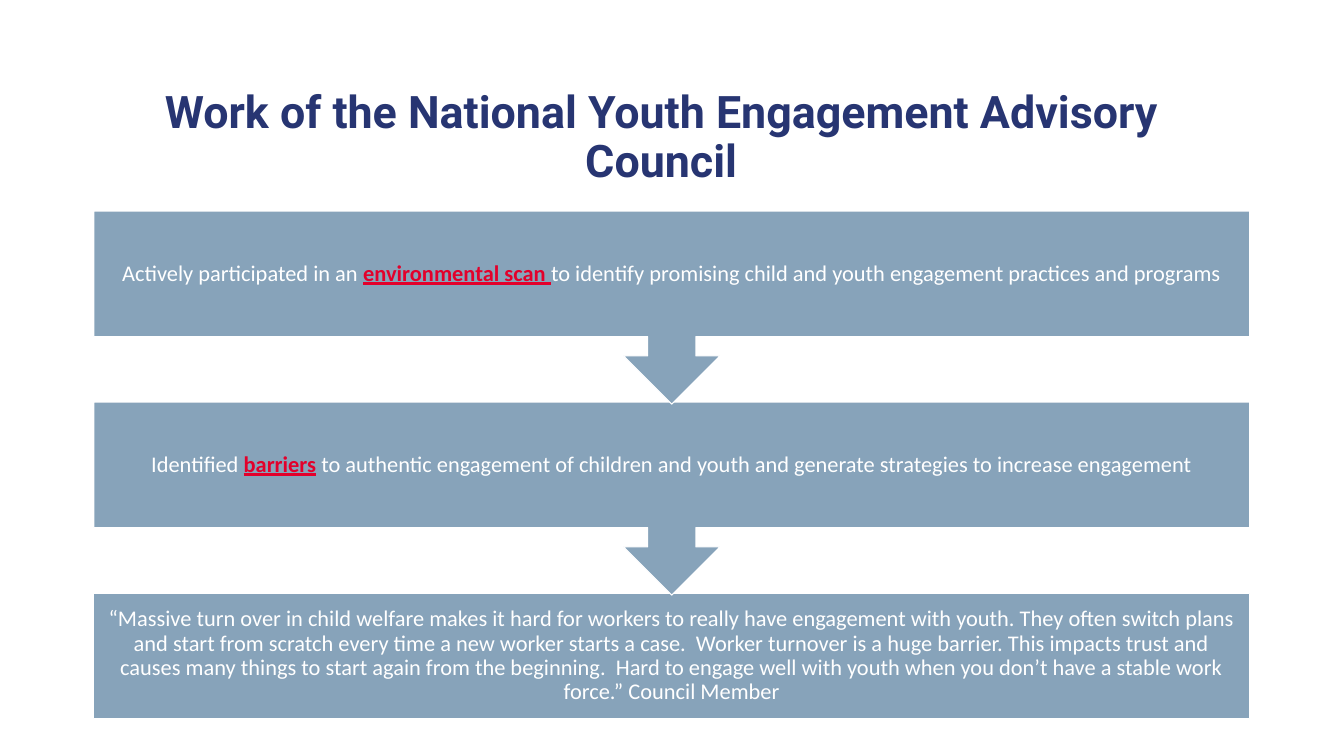
"""Builds a slide with three steps of the council's work, linked by arrow callouts."""
from pptx import Presentation
from pptx.dml.color import RGBColor
from pptx.enum.shapes import MSO_SHAPE
from pptx.enum.text import MSO_ANCHOR, PP_ALIGN
from pptx.util import Pt

RECT = MSO_SHAPE.RECTANGLE
CALLOUT = MSO_SHAPE.UP_ARROW_CALLOUT
CENTER = PP_ALIGN.CENTER
TOP, MIDDLE = MSO_ANCHOR.TOP, MSO_ANCHOR.MIDDLE
NAVY = RGBColor(0x27, 0x35, 0x72)
BLUE = RGBColor(0x87, 0xA3, 0xBA)
RED = RGBColor(0xE3, 0x00, 0x2B)
WHITE = RGBColor(0xFF, 0xFF, 0xFF)
PX = 9144
LEFT, WIDTH = 186, 2294
FIRST, STEP = 419, 379
BODY, TALL = 249, 383

STEPS = [
    [("Actively participated in an ", False),
     ("environmental scan ", True),
     ("to identify promising child and youth engagement practices and programs", False)],
    [("Identified ", False),
     ("barriers", True),
     (" to authentic engagement of children and youth and generate strategies "
      "to increase engagement", False)],
    [("“Massive turn over in child welfare makes it hard for workers to really have "
      "engagement with youth. They often switch plans and start from scratch every time "
      "a new worker starts a case.  Worker turnover is a huge barrier. This impacts "
      "trust and causes many things to start again from the beginning.  Hard to engage "
      "well with youth when you don’t have a stable work force.” Council Member", False)],
]

prs = Presentation()
prs.slide_width, prs.slide_height = 2667 * PX, 1500 * PX
slide = prs.slides.add_slide(prs.slide_layouts[6])


def add_text(left, top, height, pads, anchor):
    box = slide.shapes.add_textbox(left * PX, top * PX, WIDTH * PX, height * PX)
    frame = box.text_frame
    frame.word_wrap = True
    frame.vertical_anchor = anchor
    side, above, below = pads
    frame.margin_left = frame.margin_right = side * PX
    frame.margin_top, frame.margin_bottom = above * PX, below * PX
    para = frame.paragraphs[0]
    para.alignment = CENTER
    para.line_spacing = 0.9
    return para


def add_run(para, text, face, size, color, bold):
    run = para.add_run()
    run.text = text
    run.font.name = face
    run.font.size = Pt(size)
    run.font.color.rgb = color
    run.font.bold = bold
    return run


title = add_text(165, 80, 247, (10, 99, 0), TOP)
add_run(title, "Work of the National Youth Engagement Advisory Council",
        "Roboto", 64, NAVY, True)

last = len(STEPS) - 1
for i in range(last, -1, -1):
    top = FIRST + i * STEP
    kind, height = (RECT, BODY) if i == last else (CALLOUT, TALL)
    panel = slide.shapes.add_shape(kind, LEFT * PX, top * PX, WIDTH * PX, height * PX)
    panel.rotation = 0 if i == last else 180
    panel.shadow.inherit = False
    panel.fill.solid()
    panel.fill.fore_color.rgb = BLUE
    panel.line.color.rgb = WHITE
    panel.line.width = Pt(1.5)
    para = add_text(LEFT, top, BODY, (25, 25, 25), MIDDLE)
    for text, key in STEPS[i]:
        run = add_run(para, text, "Calibri", 32, RED if key else WHITE, key)
        run.font.underline = key

prs.save("out.pptx")
